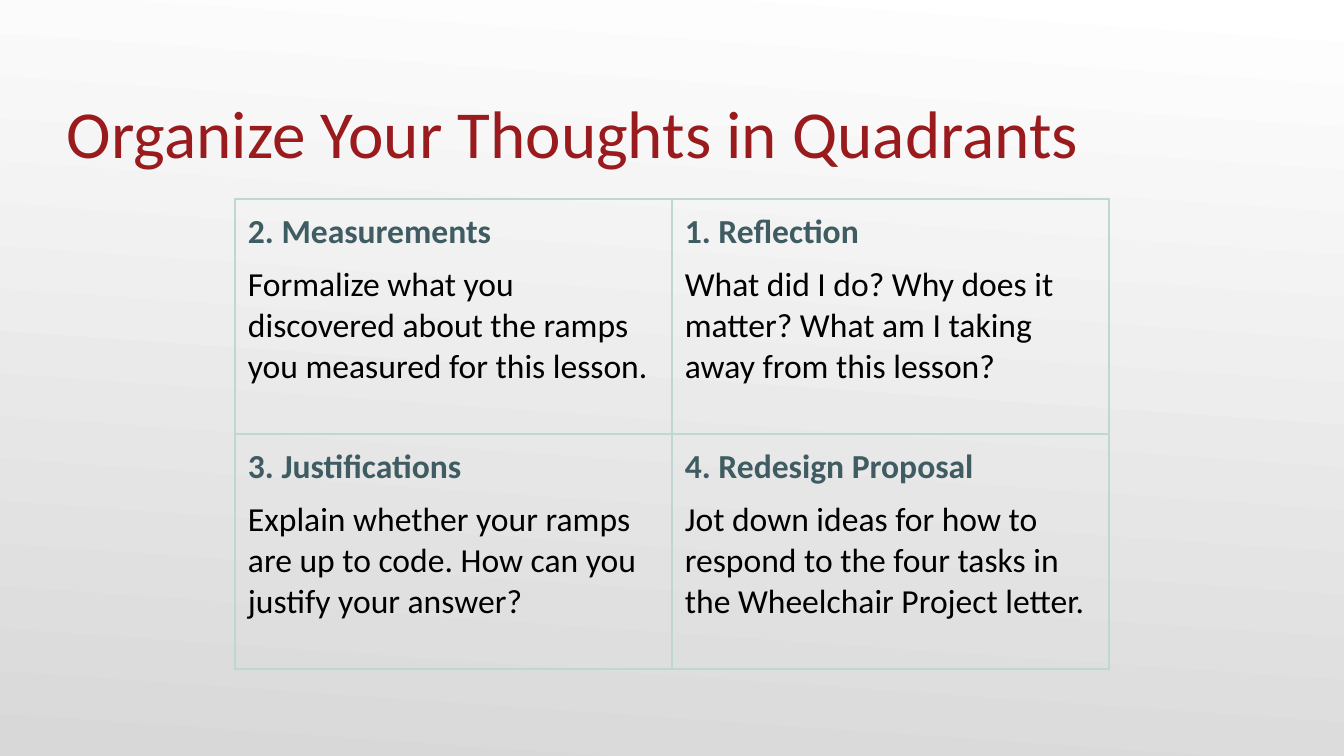
from dataclasses import dataclass

from lxml.etree import SubElement
from pptx import Presentation
from pptx.dml.color import RGBColor
from pptx.enum.text import MSO_ANCHOR
from pptx.oxml.ns import qn
from pptx.util import Pt

TITLE = "Organize Your Thoughts in Quadrants"
QUADRANTS = [
    [
        ("2. Measurements",
         "Formalize what you discovered about the ramps you measured for this lesson."),
        ("1. Reflection",
         "What did I do? Why does it matter? What am I taking away from this lesson?"),
    ],
    [
        ("3. Justifications",
         "Explain whether your ramps are up to code. How can you justify your answer?"),
        ("4. Redesign Proposal",
         "Jot down ideas for how to respond to the four tasks in the Wheelchair Project letter."),
    ],
]


@dataclass(frozen=True)
class Theme:
    font: str = "Calibri"
    title_size: int = 36
    body_size: int = 18
    title: str = "991B1E"
    heading: str = "3E5C61"
    body: str = "000000"
    border: str = "BED7D3"
    background: tuple = ("FFFFFF", "D8D8D8")


THEME = Theme()
SLIDE_WIDTH, SLIDE_HEIGHT = 1344, 756
TITLE_BOX = (67, 46, 1210, 126)
GRID_LEFT, GRID_TOP = 235, 199
CELL_WIDTH, CELL_HEIGHT = 437, 235
CELL_MARGIN = 13


def px(length):
    return round(length * 914400 / 134.4)


def add_run(paragraph, words, size, color, bold=False):
    run = paragraph.add_run()
    run.text = words
    run.font.name = THEME.font
    run.font.size = Pt(size)
    run.font.bold = bold
    run.font.color.rgb = RGBColor.from_string(color)


def set_margins(area, left, top, right, bottom):
    area.margin_left, area.margin_top = px(left), px(top)
    area.margin_right, area.margin_bottom = px(right), px(bottom)


def add_borders(cell):
    properties = cell._tc.get_or_add_tcPr()
    for side in ("lnL", "lnR", "lnT", "lnB"):
        line = SubElement(properties, qn(f"a:{side}"), w=str(Pt(1)))
        fill = SubElement(line, qn("a:solidFill"))
        SubElement(fill, qn("a:srgbClr"), val=THEME.border)


def fill_background(slide):
    fill = slide.background.fill
    fill.gradient()
    fill.gradient_angle = 266
    for stop, color in zip(fill.gradient_stops, THEME.background):
        stop.color.rgb = RGBColor.from_string(color)


def add_title(slide):
    frame = slide.shapes.add_textbox(*map(px, TITLE_BOX)).text_frame
    frame.word_wrap = True
    frame.vertical_anchor = MSO_ANCHOR.BOTTOM
    set_margins(frame, 0, 7, 0, 0)
    add_run(frame.paragraphs[0], TITLE, THEME.title_size, THEME.title)


def fill_quadrant(cell, heading, prompt):
    set_margins(cell, *[CELL_MARGIN] * 4)
    add_borders(cell)
    cell.fill.background()
    frame = cell.text_frame
    first, second = frame.paragraphs[0], frame.add_paragraph()
    first.space_after = second.space_after = Pt(6)
    add_run(first, heading, THEME.body_size, THEME.heading, bold=True)
    add_run(second, prompt, THEME.body_size, THEME.body)


def add_quadrants(slide):
    rows, columns = len(QUADRANTS), len(QUADRANTS[0])
    table = slide.shapes.add_table(
        rows, columns, px(GRID_LEFT), px(GRID_TOP),
        px(columns * CELL_WIDTH), px(rows * CELL_HEIGHT)).table
    table.first_row = table.horz_banding = False
    for row, quadrants in enumerate(QUADRANTS):
        for column, (heading, prompt) in enumerate(quadrants):
            fill_quadrant(table.cell(row, column), heading, prompt)


def main():
    deck = Presentation()
    deck.slide_width, deck.slide_height = px(SLIDE_WIDTH), px(SLIDE_HEIGHT)
    slide = deck.slides.add_slide(deck.slide_layouts[6])
    fill_background(slide)
    add_title(slide)
    add_quadrants(slide)
    deck.save("out.pptx")


if __name__ == "__main__":
    main()
